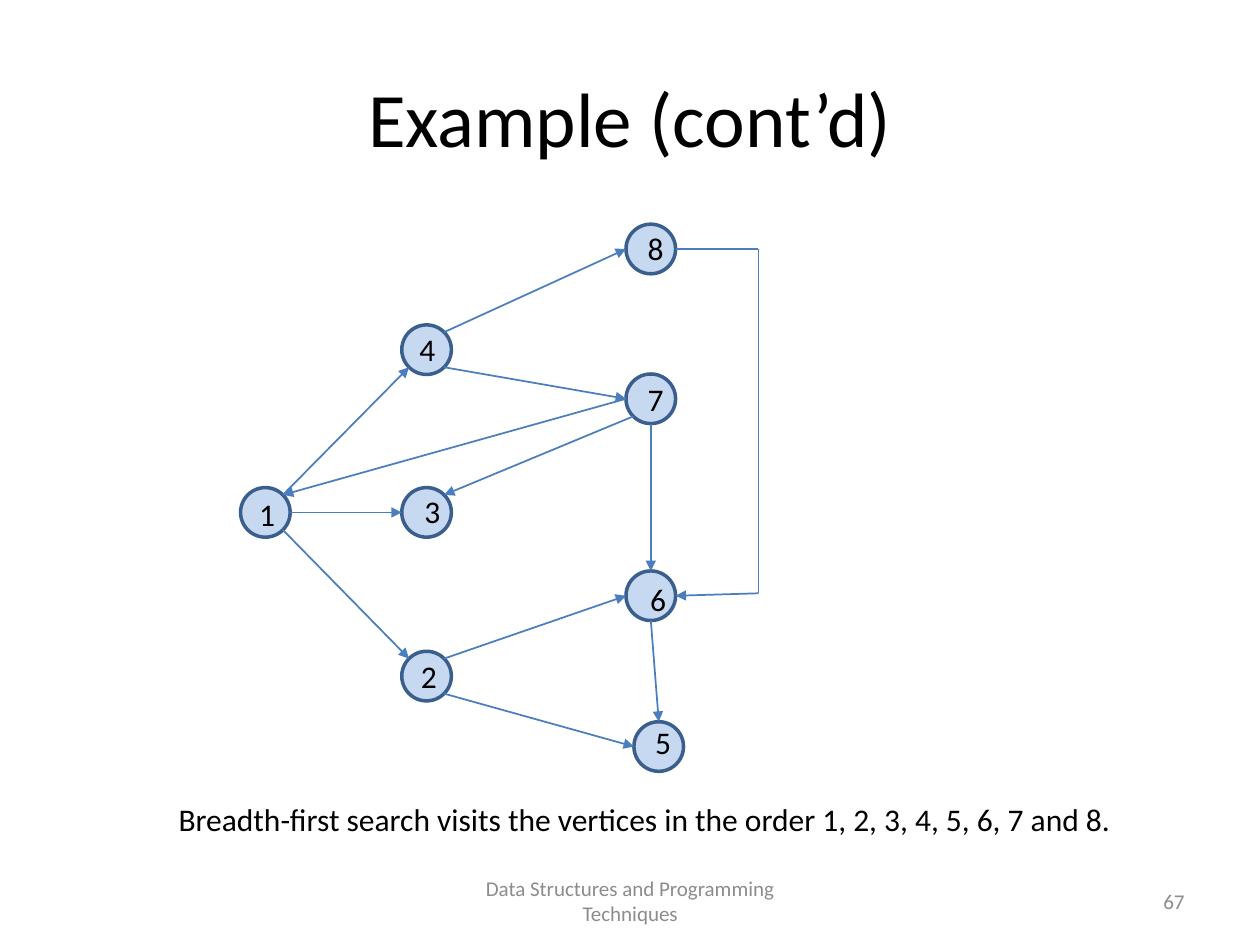
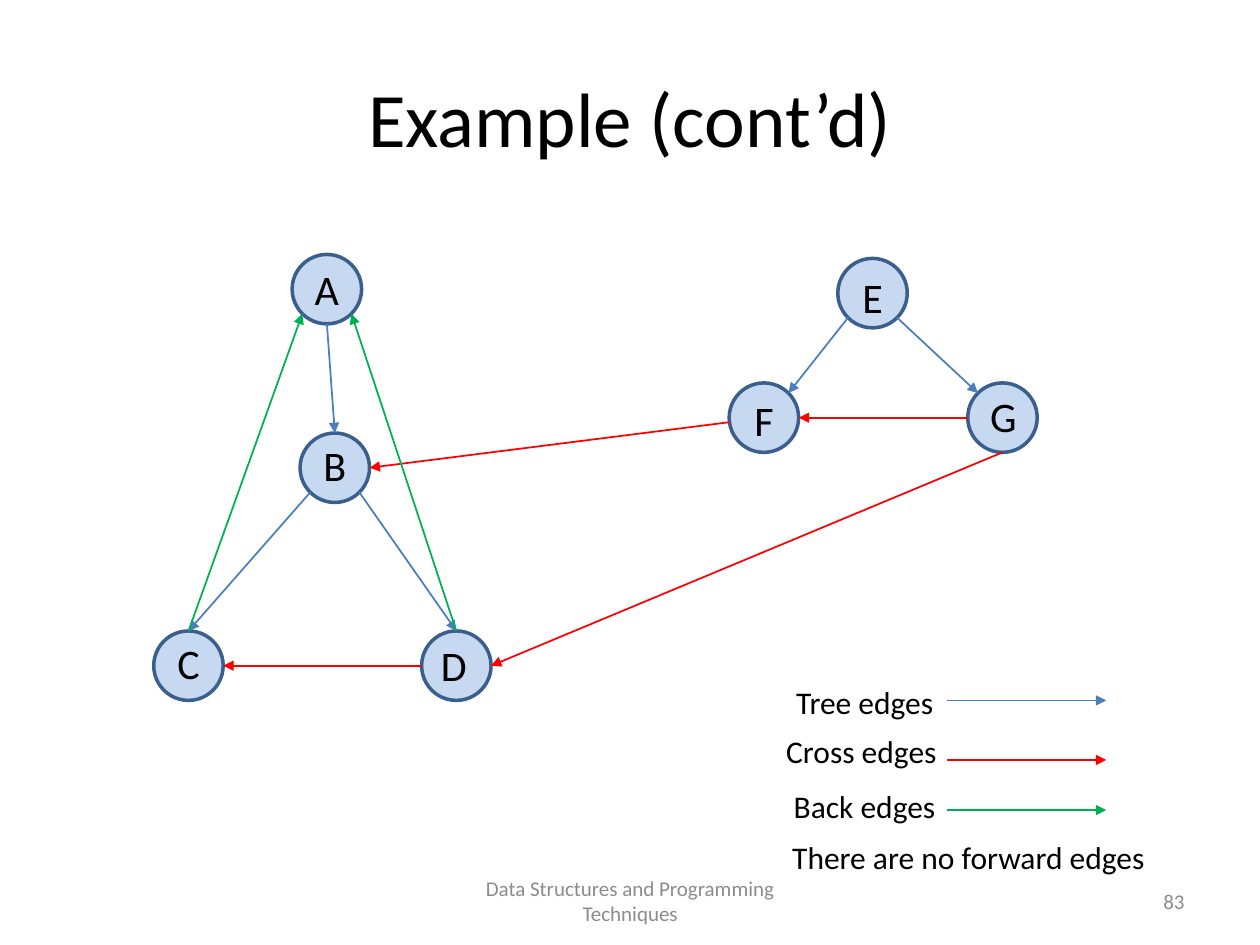
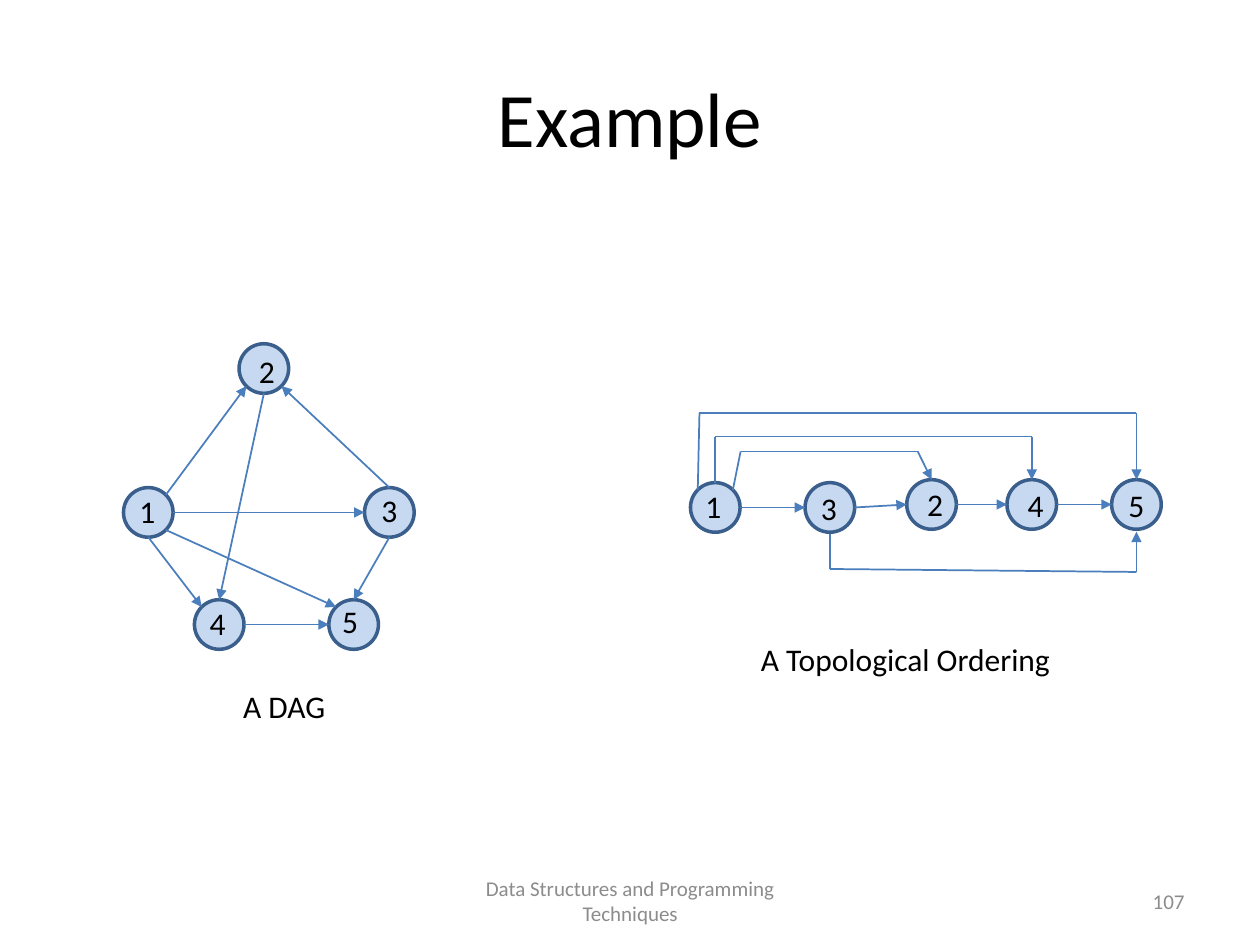
from math import cos, radians, sin

from lxml import etree
from pptx import Presentation
from pptx import util as u
from pptx.dml.color import RGBColor
from pptx.enum import shapes, text
from pptx.oxml import ns

COLOURS = {
    "text": "000000",
    "muted": "8C8C8C",
    "node": "C6D9F1",
    "rim": "3A5F8C",
    "tree": "4B7EBC",
    "cross": "FF0000",
    "back": "00B050",
}
FONT = "Calibri"
FOOTER = "Data Structures and Programming Techniques"
TITLE_BOX = (1.27, 0.76, 22.86, 3.18)
FOOTER_BOX = (8.68, 17.65, 8.05, 1.02)
NUMBER_BOX = (18.21, 17.65, 5.92, 1.02)
CAPTION_HEIGHT = 1.02
ANGLES = {"e": 0, "se": 45, "s": 90, "sw": 135, "w": 180, "nw": 225, "n": 270, "ne": 315}

# Nodes: centre x, centre y, label shift x, label shift y.
SEARCH_GRAPH = {
    "diameter": 1.0,
    "label": (0.71, 1.02, 18),
    "nodes": {
        "1": (5.35, 10.33, -0.02, 0.03),
        "2": (8.6, 13.63, -0.01, 0.01),
        "3": (8.6, 10.33, 0.06, -0.02),
        "4": (8.6, 7.05, -0.04, -0.01),
        "5": (13.28, 15.05, 0.03, -0.09),
        "6": (13.12, 12.01, 0.09, 0.06),
        "7": (13.12, 8.04, 0.04, 0.01),
        "8": (13.12, 5.02, 0.04, -0.02),
    },
    "edges": [
        ("tree", "1 ne", "4 sw"),
        ("tree", "1 e", "3 w"),
        ("tree", "1 se", "2 nw"),
        ("tree", "2 ne", "6 w"),
        ("tree", "2 se", "5 w"),
        ("tree", "4 ne", "8 w"),
        ("tree", "4 se", "7 w"),
        ("tree", "7 w", "1 ne"),
        ("tree", "7 sw", "3 ne"),
        ("tree", "7 s", "6 n"),
        ("tree", "6 s", "5 n"),
        ("tree", "8 e", (15.29, 5.02), (15.29, 11.96), "6 e"),
    ],
}

FOREST_GRAPH = {
    "diameter": 1.4,
    "label": (1.19, 1.28, 24),
    "nodes": {
        "A": (6.59, 5.83, 0, -0.01),
        "B": (6.75, 9.43, 0, -0.06),
        "C": (3.8, 13.42, 0, -0.06),
        "D": (9.2, 13.42, -0.05, -0.02),
        "E": (17.59, 5.91, 0, 0.08),
        "F": (15.4, 8.42, 0, 0.04),
        "G": (20.21, 8.42, 0.02, -0.04),
    },
    "edges": [
        ("tree", "A s", "B n"),
        ("tree", "B sw", "C n"),
        ("tree", "B se", "D n"),
        ("tree", "E sw", "F ne"),
        ("tree", "E se", "G nw"),
        ("cross", "G w", "F e"),
        ("cross", "G s", "D e"),
        ("cross", "D w", "C e"),
        ("cross", (14.71, 8.51), "B e"),
        ("back", "D n", "A se"),
        ("back", "C n", "A sw"),
        ("tree", (19.1, 14.12), (22.3, 14.12)),
        ("cross", (19.1, 15.32), (22.3, 15.32)),
        ("back", (19.1, 16.33), (22.3, 16.33)),
    ],
}

DAG = {
    "diameter": 1.0,
    "label": (0.86, 1.02, 18),
    "nodes": {
        "1": (2.99, 10.33, -0.02, -0.02),
        "2": (5.32, 7.43, 0.06, 0.06),
        "3": (7.85, 10.33, 0, -0.04),
        "4": (4.42, 12.59, -0.03, -0.02),
        "5": (7.13, 12.59, -0.07, -0.07),
    },
    "edges": [
        ("tree", "4 e", "5 w"),
        ("tree", "1 ne", "2 sw"),
        ("tree", "1 e", "3 w"),
        ("tree", "1 se", "5 nw"),
        ("tree", "3 n", "2 se"),
        ("tree", "3 s", "5 n"),
        ("tree", "1 s", "4 nw"),
        ("tree", "2 s", "4 n"),
    ],
}

ORDERING = {
    "diameter": 1.0,
    "label": (0.86, 1.02, 18),
    "nodes": {
        "1": (14.42, 10.23, -0.04, -0.02),
        "3": (16.73, 10.23, -0.02, 0.01),
        "2": (18.78, 10.17, 0.07, -0.01),
        "4": (20.8, 10.17, 0.08, 0.02),
        "5": (22.91, 10.17, 0, 0.02),
    },
    "edges": [
        ("tree", "1 e", "3 w"),
        ("tree", "3 e", "2 w"),
        ("tree", "2 e", "4 w"),
        ("tree", "4 e", "5 w"),
        ("tree", "1 n", (14.42, 8.8), (20.8, 8.8), "4 n"),
        ("tree", "1 nw", (14.1, 8.33), (22.91, 8.33), "5 n"),
        ("tree", "1 ne", (14.93, 9.1), (18.5, 9.1), "2 n"),
        ("tree", (16.73, 10.77), (16.73, 11.47), (22.91, 11.53), (22.91, 10.72)),
    ],
}

SLIDES = [
    {
        "title": "Example (cont’d)",
        "number": "67",
        "graphs": [SEARCH_GRAPH],
        "captions": [
            (3.35, 16.0, 19.56,
             "Breadth-first search visits the vertices in the order 1, 2, 3, 4, 5, 6, 7 and 8."),
        ],
    },
    {
        "title": "Example (cont’d)",
        "number": "83",
        "graphs": [FOREST_GRAPH],
        "captions": [
            (15.8, 13.64, 4.09, "Tree edges"),
            (15.6, 14.63, 4.09, "Cross edges"),
            (15.75, 15.75, 4.09, "Back edges"),
            (15.72, 16.76, 8.36, "There are no forward edges"),
        ],
    },
    {
        "title": "Example",
        "number": "107",
        "graphs": [DAG, ORDERING],
        "captions": [
            (15.09, 12.78, 7.82, "A Topological Ordering"),
            (4.65, 13.72, 7.82, "A DAG"),
        ],
    },
]


def rgb(name):
    return RGBColor.from_string(COLOURS[name])


def add_text(page, words, place, size, align="LEFT", colour="text", middle=False):
    box = page.shapes.add_textbox(*map(u.Cm, place))
    frame = box.text_frame
    frame.word_wrap = True
    if middle:
        frame.vertical_anchor = text.MSO_ANCHOR.MIDDLE
    else:
        frame.auto_size = text.MSO_AUTO_SIZE.SHAPE_TO_FIT_TEXT
    para = frame.paragraphs[0]
    para.text = words
    para.alignment = text.PP_ALIGN[align]
    para.font.name = FONT
    para.font.size = u.Pt(size)
    para.font.color.rgb = rgb(colour)


def add_line(page, start, end, colour, arrow):
    line = page.shapes.add_connector(
        shapes.MSO_CONNECTOR.STRAIGHT, *map(u.Cm, (*start, *end)))
    line.line.color.rgb = rgb(colour)
    line.line.width = u.Pt(1)
    if arrow:
        etree.SubElement(line.line._get_or_add_ln(), ns.qn("a:tailEnd"), type="triangle")
    etree.SubElement(line._element.spPr, ns.qn("a:effectLst"))


def add_node(page, x, y, diameter):
    place = (x - diameter / 2, y - diameter / 2, diameter, diameter)
    node = page.shapes.add_shape(shapes.MSO_SHAPE.OVAL, *map(u.Cm, place))
    node.shadow.inherit = False
    node.fill.solid()
    node.fill.fore_color.rgb = rgb("node")
    node.line.color.rgb = rgb("rim")
    node.line.width = u.Pt(2)


def locate(graph, point):
    if isinstance(point, tuple):
        return point
    name, side = point.split()
    x, y = graph["nodes"][name][:2]
    radius = graph["diameter"] / 2
    angle = radians(ANGLES[side])
    return x + radius * cos(angle), y + radius * sin(angle)


def add_graph(page, graph):
    for x, y, *_ in graph["nodes"].values():
        add_node(page, x, y, graph["diameter"])
    for colour, *route in graph["edges"]:
        points = [locate(graph, point) for point in route]
        for start, end in zip(points, points[1:]):
            add_line(page, start, end, colour, arrow=end is points[-1])
    width, height, size = graph["label"]
    for name, (x, y, shift_x, shift_y) in graph["nodes"].items():
        place = (x + shift_x - width / 2, y + shift_y - height / 2, width, height)
        add_text(page, name, place, size, "CENTER")


def add_page(deck, content):
    page = deck.slides.add_slide(deck.slide_layouts[6])
    add_text(page, content["title"], TITLE_BOX, 44, "CENTER", middle=True)
    add_text(page, FOOTER, FOOTER_BOX, 12, "CENTER", "muted", middle=True)
    add_text(page, content["number"], NUMBER_BOX, 12, "RIGHT", "muted", middle=True)
    for graph in content["graphs"]:
        add_graph(page, graph)
    for left, top, width, words in content["captions"]:
        add_text(page, words, (left, top, width, CAPTION_HEIGHT), 18)


def main():
    deck = Presentation()
    deck.slide_width, deck.slide_height = u.Cm(25.4), u.Cm(19.05)
    for content in SLIDES:
        add_page(deck, content)
    deck.save("out.pptx")


if __name__ == "__main__":
    main()
